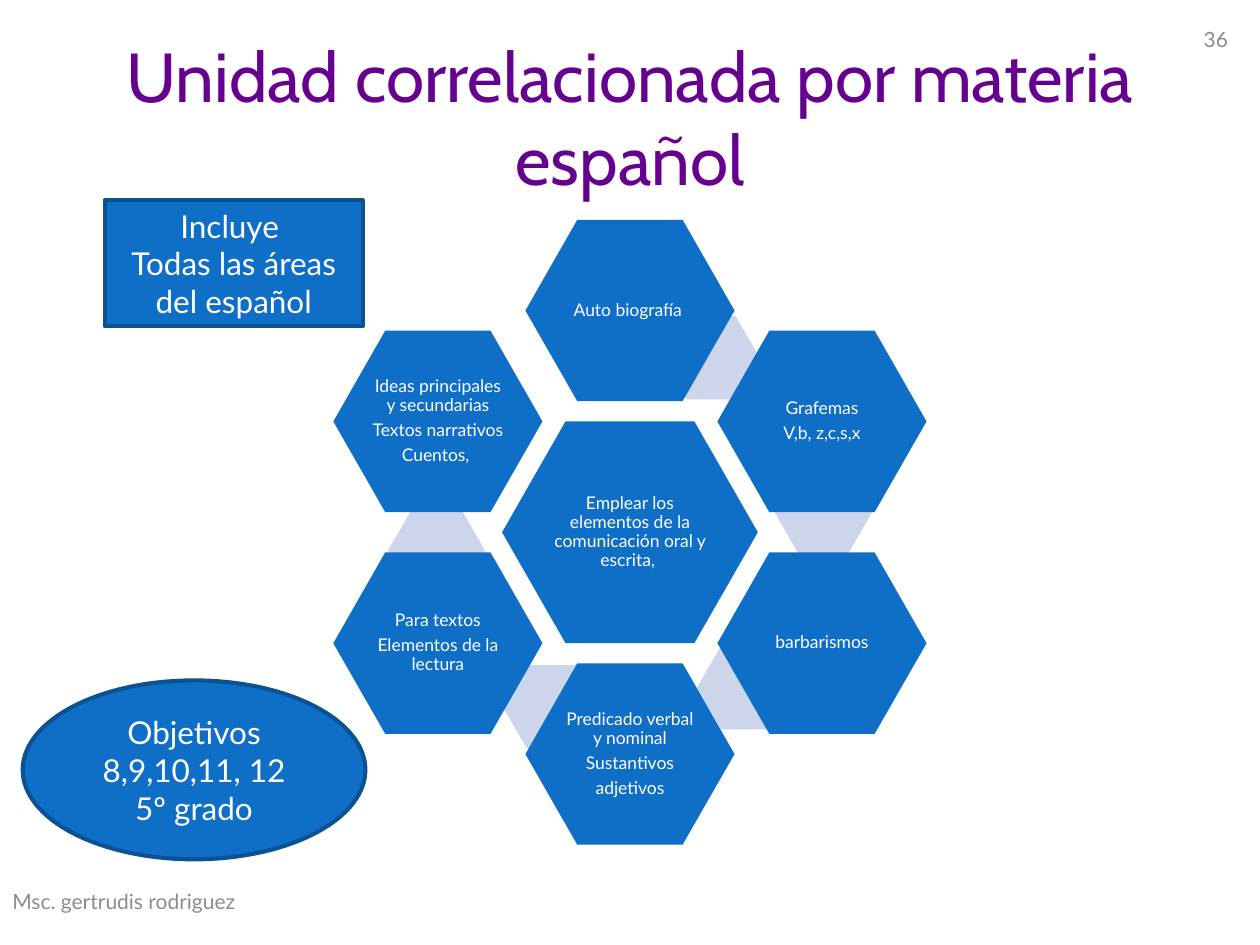
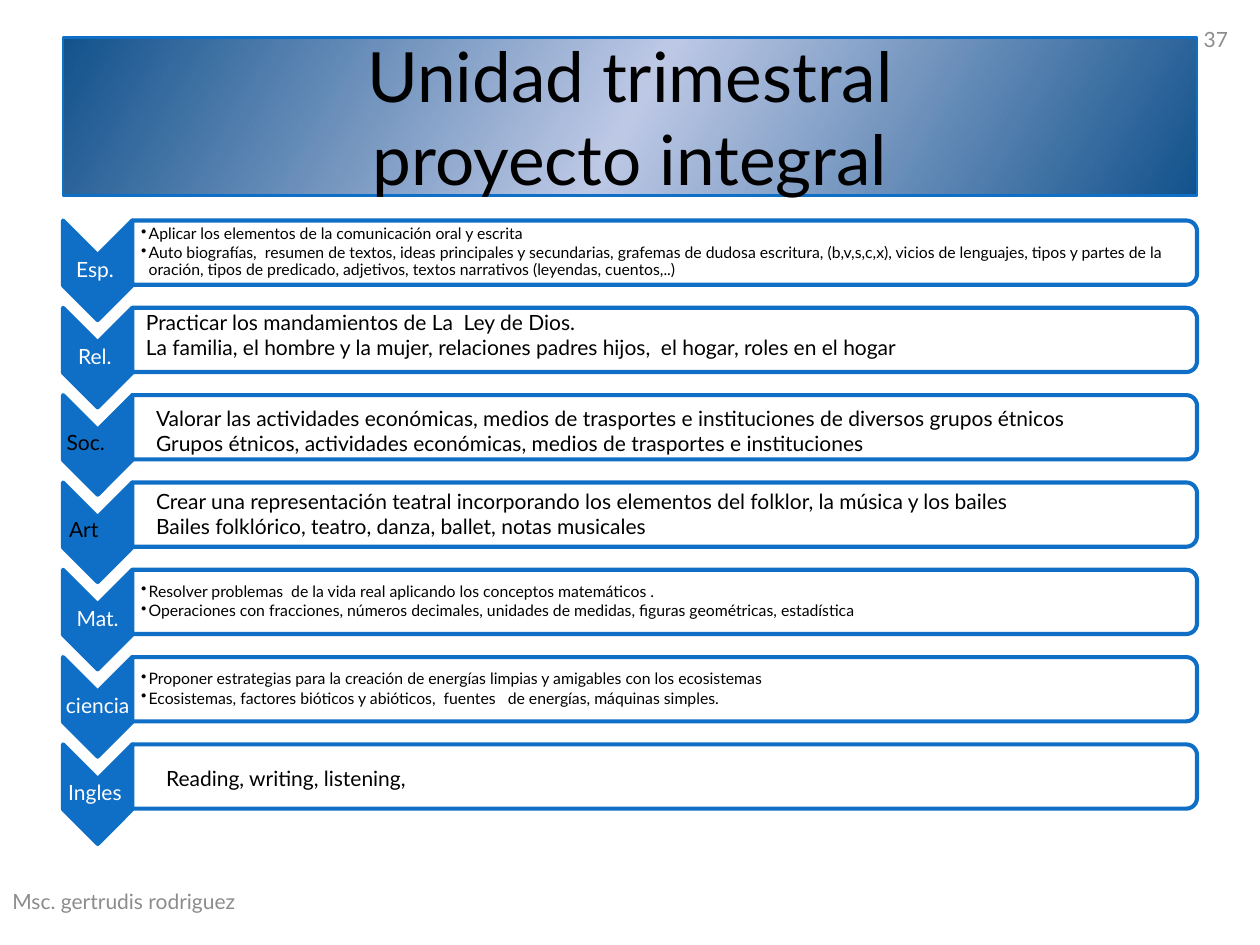
from copy import deepcopy
from math import cos, radians, sin

from lxml import etree
from pptx import Presentation
from pptx import util as u
from pptx.dml.color import RGBColor
from pptx.enum import shapes, text
from pptx.oxml import parse_xml
from pptx.oxml.ns import nsdecls, qn

COLS, ROWS = 100, 75
BLUE, NAVY, PALE, WHITE, BLACK, GREY = "0F6FC6", "0B5292", "CCD5EA", "FFFFFF", "000000", "8C8C8C"
PURPLE = "66008F"
BODY, DISPLAY = "Lato", "Cabin"
AUTHOR = "Msc. gertrudis rodriguez"
SHAPE, ALIGN, FIT = shapes.MSO_SHAPE, text.PP_ALIGN, text.MSO_AUTO_SIZE
TITLE_BOX = (5, 3, 90, 12.5)
TIGHT = (0.1, 0.1, 0.1, 0.1)

HUB = "Emplear los elementos de la comunicación oral y escrita, "
TOPICS = [
    ["Auto biografía "],
    ["Grafemas", "V,b, z,c,s,x"],
    ["barbarismos"],
    ["Predicado verbal y nominal", "Sustantivos", "adjetivos"],
    ["Para textos", "Elementos de la lectura"],
    ["Ideas principales y secundarias", "Textos narrativos", "Cuentos, "],
]
LINK_CENTRES = [(56.45, 28.4), (65.35, 40.7), (59.15, 54.6), (43.75, 56.1), (34.65, 43.7)]

SUBJECTS = [
    ("Esp. ", [
        "Aplicar los elementos de la comunicación oral y escrita",
        "Auto biografías,  resumen de textos, ideas principales y secundarias, grafemas de dudosa "
        "escritura, (b,v,s,c,x), vicios de lenguajes, tipos y partes de la oración, tipos de "
        "predicado, adjetivos, textos narrativos (leyendas, cuentos,..)"]),
    ("Rel. ", []),
    ("", []),
    ("", []),
    ("Mat.", [
        "Resolver problemas  de la vida real aplicando los conceptos matemáticos .",
        "Operaciones con fracciones, números decimales, unidades de medidas, figuras geométricas, "
        "estadística"]),
    ("ciencia", [
        "Proponer estrategias para la creación de energías limpias y amigables con los ecosistemas",
        "Ecosistemas, factores bióticos y abióticos,  fuentes   de energías, máquinas simples."]),
    ("Ingles ", []),
]
FREE_TEXTS = [
    ((10.6, 24.1, 63.6, 5), [
        "Practicar los mandamientos de La  Ley de Dios.",
        "La familia, el hombre y la mujer, relaciones padres hijos,  el hogar, roles en el hogar"]),
    ((11.4, 31.7, 76.8, 7.1), [
        "Valorar las actividades económicas, medios de trasportes e instituciones de diversos grupos étnicos",
        "Grupos étnicos, actividades económicas, medios de trasportes e instituciones"]),
    ((4.3, 33.6, 5.9, 3), ["Soc."]),
    ((4.5, 40.5, 5.1, 3), ["Art"]),
    ((11.4, 38.3, 72, 7.1), [
        "Crear una representación teatral incorporando los elementos del folklor, la música y los bailes",
        "Bailes folklórico, teatro, danza, ballet, notas musicales"]),
    ((12.2, 60.3, 22.1, 3), ["Reading, writing, listening,"]),
]


def rgb(value):
    """Turn a hex string into a colour."""
    return RGBColor.from_string(value)


def cells(n):
    """Turn grid cells into a length."""
    return u.Inches(n * 10 / COLS)


def write(sp, lines, size=12, color=BLACK, font=BODY, align=ALIGN.LEFT, anchor=text.MSO_ANCHOR.MIDDLE,
          margins=None, spacing=None, after=None, bullet=False, wrap=True, fit=FIT.NONE):
    """Fill a shape with one formatted paragraph per line."""
    tf = sp.text_frame
    tf.word_wrap, tf.auto_size, tf.vertical_anchor = wrap, fit, anchor
    if margins:
        tf.margin_left, tf.margin_top, tf.margin_right, tf.margin_bottom = map(cells, margins)
    for i, line in enumerate(lines):
        p = tf.add_paragraph() if i else tf.paragraphs[0]
        p.text, p.alignment = line, align
        if spacing:
            p.line_spacing = spacing
        if after:
            p.space_after = u.Pt(after * size)
        for r in p.runs:
            r.font.size, r.font.name = u.Pt(size), font
            r.font.color.rgb = rgb(color)
        for br in p._p.findall(qn("a:br")):
            br.append(deepcopy(p.runs[0]._r.rPr))
        if bullet:
            pPr = p._p.get_or_add_pPr()
            pPr.set("marL", str(cells(0.6)))
            pPr.set("indent", str(-cells(0.6)))
            etree.SubElement(pPr, qn("a:buChar")).set("char", "•")


def add_box(s, kind, box, fill=None, line=None, adj=None):
    """Add a flat preset shape."""
    sp = s.shapes.add_shape(kind, *map(cells, box))
    sp.shadow.inherit = False
    if fill:
        sp.fill.solid()
        sp.fill.fore_color.rgb = rgb(fill)
    else:
        sp.fill.background()
    if line:
        sp.line.color.rgb, sp.line.width = rgb(line), u.Pt(2.36)
    else:
        sp.line.fill.background()
    if adj is not None:
        sp.adjustments[0] = adj
    return sp


def add_turned(s, kind, box, fill):
    """Add an outlined shape turned a quarter, so that it covers the box."""
    x, y, w, h = box
    sp = add_box(s, kind, (x + (w - h) / 2, y + (h - w) / 2, h, w), fill, BLUE)
    sp.rotation = 90


def add_text(s, box, lines, **fmt):
    """Add a text box."""
    write(s.shapes.add_textbox(*map(cells, box)), lines, **fmt)


def add_hexagon(s, centre, width, height, fill, lines=(), adj=0.286):
    """Add a hexagon around a centre, with its text."""
    x, y = centre
    sp = add_box(s, SHAPE.HEXAGON, (x - width / 2, y - height / 2, width, height), fill, adj=adj)
    write(sp, lines, size=10, color=WHITE, align=ALIGN.CENTER, margins=TIGHT, spacing=0.9, after=0.35)


def add_slide(prs, title, number, **fmt):
    """Add a slide with title, author footer and number."""
    s = prs.slides.add_slide(prs.slide_layouts[5])
    sp = s.shapes.title
    sp.left, sp.top, sp.width, sp.height = map(cells, TITLE_BOX)
    write(sp, [title], size=39.6, align=ALIGN.CENTER, **fmt)
    add_text(s, (0, 69.5, 31.7, 4), [AUTHOR], color=GREY)
    badge = add_box(s, SHAPE.ROUNDED_RECTANGLE, (93, 0, 7, 6.2))
    write(badge, [number], color=GREY, align=ALIGN.CENTER)
    return s


def shade_title(sp):
    """Give the title a three-stop gradient and a thin outline."""
    stops = "".join(f'<a:gs pos="{pos}000"><a:srgbClr val="{c}"/></a:gs>'
                    for pos, c in ((0, "12528C"), (50, "BDC8E5"), (100, "12528C")))
    sp._element.spPr.append(parse_xml(
        f'<a:gradFill {nsdecls("a")} rotWithShape="1"><a:gsLst>{stops}</a:gsLst>'
        '<a:lin ang="1800000" scaled="0"/></a:gradFill>'))
    sp.line.color.rgb, sp.line.width = rgb(BLUE), u.Pt(1.57)


def build_unit_wheel(prs):
    """Build the slide with the ring of topics."""
    s = add_slide(prs, "Unidad correlacionada por materia\nespañol", "36", color=PURPLE, font=DISPLAY)
    for centre in LINK_CENTRES:
        add_hexagon(s, centre, 7.7, 6.6, PALE, adj=0.289)
    cx, cy, radius = 50, 42.25, 17.6
    add_hexagon(s, (cx, cy), 20.3, 17.6, BLUE, [HUB])
    for i, lines in enumerate(TOPICS):
        a = radians(i * 360 / len(TOPICS))
        add_hexagon(s, (cx + radius * sin(a), cy - radius * cos(a)), 16.6, 14.4, BLUE, lines)
    for kind, box, lines in (
            (SHAPE.RECTANGLE, (8.3, 15.9, 20.5, 10), ["Incluye ", "Todas las áreas del español"]),
            (SHAPE.OVAL, (1.8, 54, 27.2, 14.2), ["Objetivos", "8,9,10,11, 12", "5º grado"])):
        write(add_box(s, kind, box, BLUE, NAVY), lines, size=18, color=WHITE, align=ALIGN.CENTER)


def build_term_plan(prs):
    """Build the slide with one chevron row per subject."""
    s = add_slide(prs, "Unidad trimestral\nproyecto integral", "37")
    shade_title(s.shapes.title)
    left, top, pitch, chevron = 5, 17.5, 6.93, 5.5
    for i, (label, points) in enumerate(SUBJECTS):
        y = top + i * pitch
        add_turned(s, SHAPE.CHEVRON, (left, y, chevron, 7.9), BLUE)
        add_turned(s, SHAPE.ROUND_2_SAME_RECTANGLE, (left + chevron, y, 84.5, 5.1), WHITE)
        if label:
            add_text(s, (left, y + 2.75, chevron, 2.4), [label], color=WHITE, align=ALIGN.CENTER,
                     margins=TIGHT, spacing=0.9, after=0.35)
        if points:
            add_text(s, (left + chevron, y + 0.25, 84.2, 4.6), points, size=9,
                     margins=(0.7, 0.1, 0.1, 0.1), spacing=0.9, after=0.15, bullet=True)
    for box, lines in FREE_TEXTS:
        add_text(s, box, lines, anchor=text.MSO_ANCHOR.TOP, wrap=False, fit=FIT.SHAPE_TO_FIT_TEXT)


def main():
    """Build and save the presentation."""
    prs = Presentation()
    prs.slide_width, prs.slide_height = cells(COLS), cells(ROWS)
    build_unit_wheel(prs)
    build_term_plan(prs)
    prs.save("out.pptx")


if __name__ == "__main__":
    main()
